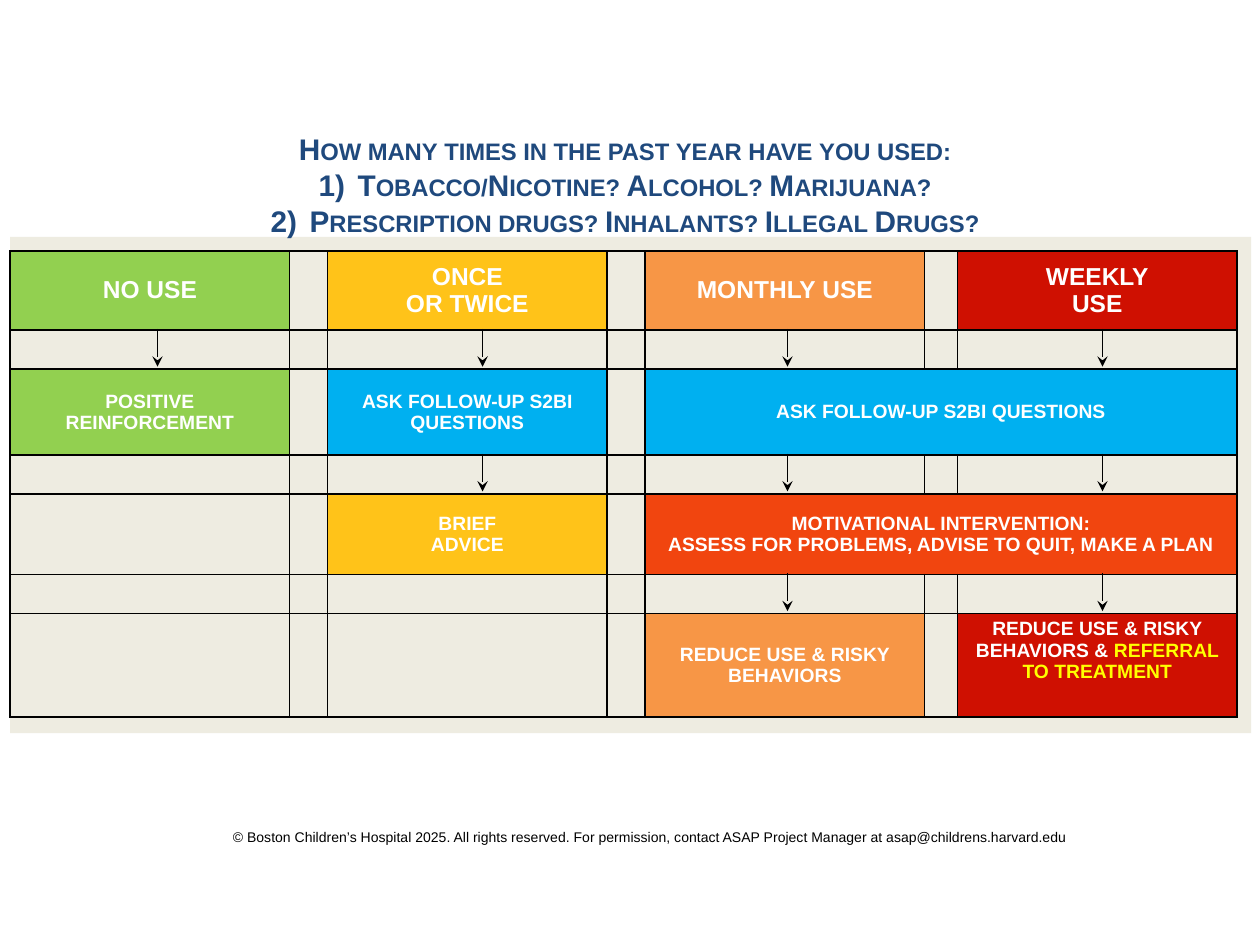
from itertools import accumulate
from lxml.etree import SubElement
from pptx import Presentation
from pptx.dml.color import RGBColor
from pptx.enum.shapes import MSO_CONNECTOR as CONN, MSO_SHAPE as SHAPE
from pptx.enum.text import MSO_ANCHOR as ANCHOR, PP_ALIGN as ALIGN
from pptx.oxml.ns import qn
from pptx.util import Inches, Pt

W, H = 10, 7.5
INK, WHITE, BEIGE, NAVY, YELLOW = "000000", "FFFFFF", "EEECE1", "1F497D", "FFFF00"
GREEN, GOLD, ORANGE, RED = "92D050", "FFC319", "F79646", "CF1001"
BLUE, VERMILION = "00B0F0", "F1450F"

QUESTION = [
    "How many times in the past year have you used:",
    "Tobacco/Nicotine? Alcohol? Marijuana?",
    "Prescription drugs? Inhalants? Illegal Drugs?",
]
COPYRIGHT = ("© Boston Children’s Hospital 2025. All rights reserved. For permission, "
             "contact ASAP Project Manager at asap@childrens.harvard.edu")

LEFT, TOP = 0.08, 1.99
COLS = [2.22, 0.3, 2.22, 0.3, 2.22, 0.26, 2.22]
ROWS = [0.63, 0.31, 0.68, 0.31, 0.64, 0.31, 0.82]
STEPS = {
    (0, 0): (GREEN, 1, ["NO USE"]),
    (0, 2): (GOLD, 1, ["ONCE", "OR TWICE"]),
    (0, 4): (ORANGE, 1, ["MONTHLY USE"]),
    (0, 6): (RED, 1, ["WEEKLY", "USE"]),
    (2, 0): (GREEN, 1, ["POSITIVE REINFORCEMENT"]),
    (2, 2): (BLUE, 1, ["ASK FOLLOW-UP S2BI QUESTIONS"]),
    (2, 4): (BLUE, 3, ["ASK FOLLOW-UP S2BI QUESTIONS"]),
    (4, 2): (GOLD, 1, ["BRIEF", "ADVICE"]),
    (4, 4): (VERMILION, 3, ["MOTIVATIONAL INTERVENTION:",
                            "ASSESS FOR PROBLEMS, ADVISE TO QUIT, MAKE A PLAN"]),
    (6, 4): (ORANGE, 1, ["REDUCE USE & RISKY BEHAVIORS"]),
    (6, 6): (RED, 1, ["REDUCE USE & RISKY BEHAVIORS & |REFERRAL TO TREATMENT"]),
}
ARROW_X = {1: [1.25, 3.83, 6.25, 8.75], 3: [3.83, 6.25, 8.75], 5: [6.25, 8.75]}
ARROW_LEN = 0.3


def rgb(value):
    """Turn a hex string into a colour."""
    return RGBColor.from_string(value)


def add_run(p, text, color, **fmt):
    """Add an Arial run to a paragraph."""
    r = p.add_run()
    r.text = text
    r.font.color.rgb = rgb(color)
    for key, value in {"name": "Arial", **fmt}.items():
        setattr(r.font, key, value)
    return r


def set_margins(obj, x, y):
    """Set the four text margins of a cell or text frame in inches."""
    for side, value in {"left": x, "right": x, "top": y, "bottom": y}.items():
        setattr(obj, f"margin_{side}", Inches(value))


def paragraphs(tf, lines):
    """Yield one centred paragraph with each line."""
    for i, line in enumerate(lines):
        p = tf.add_paragraph() if i else tf.paragraphs[0]
        p.alignment = ALIGN.CENTER
        yield i, p, line


def add_box(s, box, fill):
    """Add a plain filled rectangle."""
    sp = s.shapes.add_shape(SHAPE.RECTANGLE, *map(Inches, box))
    sp.shadow.inherit = False
    sp.fill.solid()
    sp.fill.fore_color.rgb = rgb(fill)
    sp.line.fill.background()
    return sp


def add_borders(cell):
    """Draw a thin black line on all sides of a cell."""
    tcPr = cell._tc.get_or_add_tcPr()
    for side in "LRTB":
        ln = SubElement(tcPr, qn(f"a:ln{side}"), w=str(Pt(1)))
        SubElement(SubElement(ln, qn("a:solidFill")), qn("a:srgbClr"), val=INK)


def add_steps(s):
    """Add the table of screening steps."""
    frame = s.shapes.add_table(len(ROWS), len(COLS),
                               *map(Inches, (LEFT, TOP, sum(COLS), sum(ROWS))))
    table = frame.table
    table.first_row = table.horz_banding = False
    for tracks, key, sizes in ((table.columns, "width", COLS), (table.rows, "height", ROWS)):
        for track, size in zip(tracks, sizes):
            setattr(track, key, Inches(size))
    for cell in table.iter_cells():
        set_margins(cell, 0, 0)
        add_borders(cell)
        cell.fill.background()
    for (row, col), (fill, span, lines) in STEPS.items():
        cell = table.cell(row, col)
        if span > 1:
            cell.merge(table.cell(row, col + span - 1))
        set_margins(cell, 0.1, 0.04)
        cell.fill.solid()
        cell.fill.fore_color.rgb = rgb(fill)
        cell.vertical_anchor = ANCHOR.TOP if (row, col) == (6, 6) else ANCHOR.MIDDLE
        for _, p, line in paragraphs(cell.text_frame, lines):
            for text, color in zip(line.split("|"), (WHITE, YELLOW)):
                add_run(p, text, color, size=Pt(11 if row else 14), bold=True)


def add_arrow(s, x, y):
    """Add a downward arrow."""
    cn = s.shapes.add_connector(CONN.STRAIGHT, *map(Inches, (x, y, x, y + ARROW_LEN)))
    cn.line.color.rgb = rgb(INK)
    cn.line.width = Pt(0.75)
    SubElement(cn.line._get_or_add_ln(), qn("a:tailEnd"), type="stealth")
    SubElement(cn._element.spPr, qn("a:effectLst"))


def add_question(s):
    """Add the heading with its two numbered questions."""
    tf = s.shapes.add_textbox(*map(Inches, (0.17, 1, 9.58, 0.71))).text_frame
    tf.word_wrap = True
    set_margins(tf, 0.08, 0.04)
    for i, p, line in paragraphs(tf, QUESTION):
        if i:
            pPr = p._p.get_or_add_pPr()
            pPr.set("marL", str(Inches(0.31)))
            pPr.set("indent", str(Inches(-0.31)))
            SubElement(SubElement(pPr, qn("a:buClr")), qn("a:srgbClr"), val=NAVY)
            SubElement(pPr, qn("a:buAutoNum"), type="arabicParenR")
        r = add_run(p, line, NAVY, size=Pt(17), bold=True)
        r._r.get_or_add_rPr().set("cap", "small")


def main():
    """Build the slide and save it."""
    prs = Presentation()
    prs.slide_width, prs.slide_height = Inches(W), Inches(H)
    s = prs.slides.add_slide(prs.slide_layouts[6])

    tf = add_box(s, (1.75, 6.52, 7, 0.24), WHITE).text_frame
    tf.word_wrap = True
    tf.paragraphs[0].alignment = ALIGN.LEFT
    add_run(tf.paragraphs[0], COPYRIGHT, INK, size=Pt(8))

    add_box(s, (LEFT, 1.88, 9.85, 3.94), BEIGE)
    add_steps(s)
    tops = list(accumulate(ROWS, initial=TOP))
    for row, xs in ARROW_X.items():
        for x in xs:
            add_arrow(s, x, tops[row] - 0.01)
    add_question(s)
    prs.save("out.pptx")


if __name__ == "__main__":
    main()
